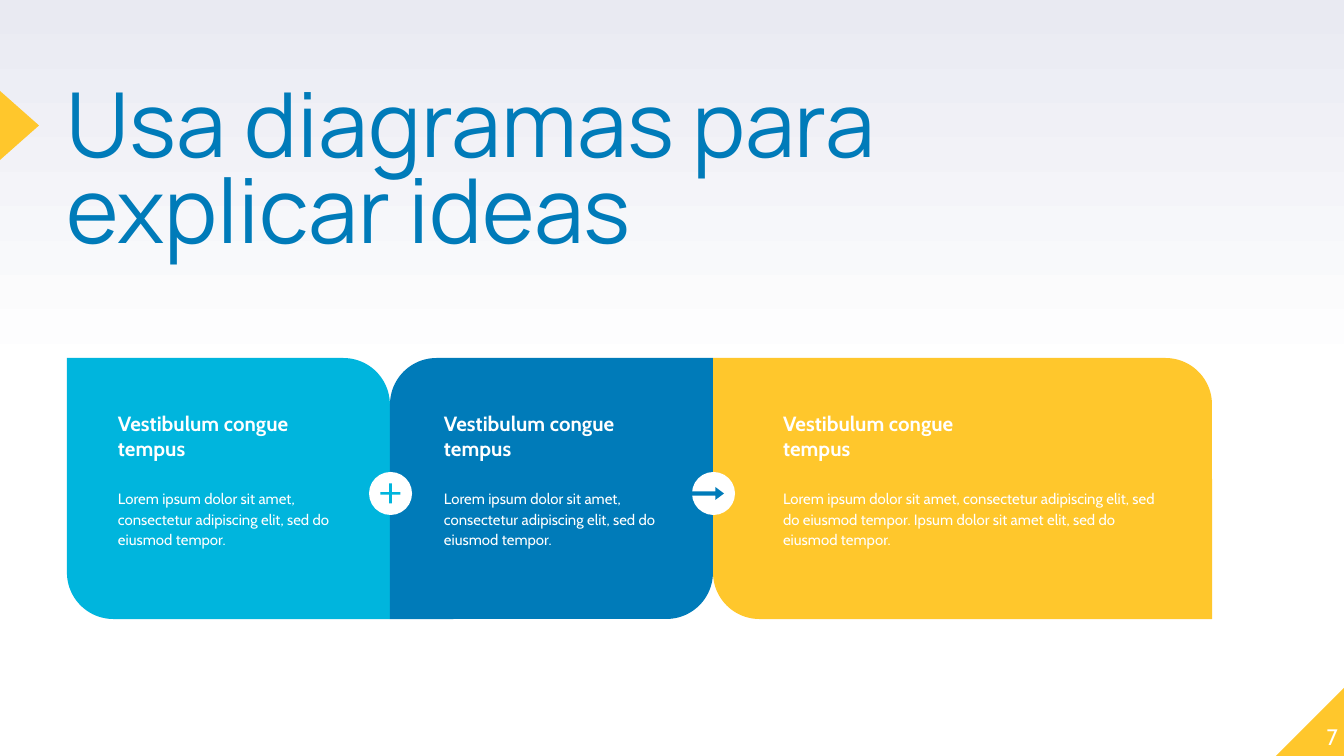
from copy import deepcopy

from pptx import Presentation
from pptx.dml.color import RGBColor
from pptx.enum.shapes import MSO_SHAPE
from pptx.enum.text import MSO_ANCHOR, MSO_AUTO_SIZE, PP_ALIGN
from pptx.oxml.ns import qn
from pptx.util import Emu, Pt

EMU_PER_PX = 914400 / 134.4
WHITE, BLUE, CYAN, YELLOW = "FFFFFF", "007BB9", "00B5DD", "FFC72C"
CARD_LEFT, CARD_TOP, CARD_HEIGHT = 67, 358, 261
BADGE_SIZE = 43
HEADING = "Vestibulum congue tempus"
BODY = "Lorem ipsum dolor sit amet, consectetur adipiscing elit, sed do eiusmod tempor."
CARDS = [
    (323, 38, 242, CYAN, (0, 0.178), HEADING, BODY),
    (323, 41, 242, BLUE, (0.178, 0), HEADING, BODY),
    (499, 57, 402, YELLOW, (0, 0.178), "Vestibulum congue\vtempus",
     BODY + " Ipsum dolor sit amet elit, sed do eiusmod tempor."),
]


def px(n):
    return Emu(round(n * EMU_PER_PX))


def rgb(value):
    return RGBColor.from_string(value)


def add_shape(shapes, kind, box, color, adjustments=()):
    sp = shapes.add_shape(kind, *map(px, box))
    sp.shadow.inherit = False
    sp.fill.solid()
    sp.fill.fore_color.rgb = rgb(color)
    sp.line.fill.background()
    for i, value in enumerate(adjustments):
        sp.adjustments[i] = value
    return sp


def write(sp, text, size, color=WHITE, font="Cabin", bold=False, inset=0,
          align=PP_ALIGN.LEFT, anchor=MSO_ANCHOR.TOP, spacing=None, after=None):
    tf = sp.text_frame
    tf.word_wrap = True
    tf.auto_size = MSO_AUTO_SIZE.NONE
    tf.vertical_anchor = anchor
    tf.margin_left = tf.margin_right = tf.margin_top = tf.margin_bottom = px(inset)
    p = tf.paragraphs[0]
    p.text = text
    p.alignment = align
    p.line_spacing = spacing
    p.space_after = after
    for r in p.runs:
        r.font.name = font
        r.font.size = Pt(size)
        r.font.bold = bold
        r.font.color.rgb = rgb(color)
    for br in p._p.findall(qn("a:br")):
        br.insert(0, deepcopy(p.runs[0]._r.rPr))


def add_text(shapes, box, text, **fmt):
    write(shapes.add_textbox(*map(px, box)), text, **fmt)


def set_background(s):
    fill = s.background.fill
    fill.gradient()
    fill.gradient_angle = 90
    for stop, position, color in zip(fill.gradient_stops, (0.5, 1), (WHITE, "E9EAF2")):
        stop.position = position
        stop.color.rgb = rgb(color)


def add_title(s, text):
    title = s.shapes.title
    title.left, title.top, title.width, title.height = map(px, (67, 89, 829, 159))
    write(title, text, size=48, color=BLUE, font="Manrope", spacing=0.8)


def add_card(s, left, width, indent, text_width, color, corners, heading, body):
    shapes = s.shapes.add_group_shape().shapes
    add_shape(shapes, MSO_SHAPE.ROUND_2_DIAG_RECTANGLE,
              (left, CARD_TOP, width, CARD_HEIGHT), color, corners)
    add_text(shapes, (left + indent, 398, text_width, 77), heading,
             size=11, bold=True, inset=13)
    add_text(shapes, (left + indent, 474, text_width, 85), body,
             size=8, inset=13, spacing=1.15, after=Pt(16))


def add_badge(s, seam, symbol, symbol_box, color, adjustments):
    shapes = s.shapes.add_group_shape().shapes
    left, top = seam - BADGE_SIZE // 2, 472
    add_shape(shapes, MSO_SHAPE.OVAL, (left, top, BADGE_SIZE, BADGE_SIZE), WHITE)
    dx, dy, width, height = symbol_box
    add_shape(shapes, symbol, (left + dx, top + dy, width, height), color, adjustments)


def main():
    prs = Presentation()
    prs.slide_width, prs.slide_height = px(1344), px(756)
    s = prs.slides.add_slide(prs.slide_layouts[5])
    set_background(s)

    corner = add_shape(s.shapes, MSO_SHAPE.RIGHT_TRIANGLE, (1276, 687, 69, 69), YELLOW)
    corner._element.spPr.xfrm.set("flipH", "1")
    marker = add_shape(s.shapes, MSO_SHAPE.ISOSCELES_TRIANGLE, (-15, 106, 69, 39), YELLOW)
    marker.rotation = 90

    add_title(s, "Usa diagramas para explicar ideas")
    add_text(s.shapes, (1271, 681, 67, 69), "7", size=12,
             align=PP_ALIGN.RIGHT, anchor=MSO_ANCHOR.BOTTOM)

    left, seams = CARD_LEFT, []
    for width, *details in CARDS:
        add_card(s, left, width, *details)
        left += width
        seams.append(left)

    add_badge(s, seams[0], MSO_SHAPE.MATH_PLUS, (8, 8, 27, 27), CYAN, (0.099,))
    add_badge(s, seams[1], MSO_SHAPE.RIGHT_ARROW, (0, 15, 32, 13), BLUE, (0.32, 0.67))

    prs.save("out.pptx")


if __name__ == "__main__":
    main()
